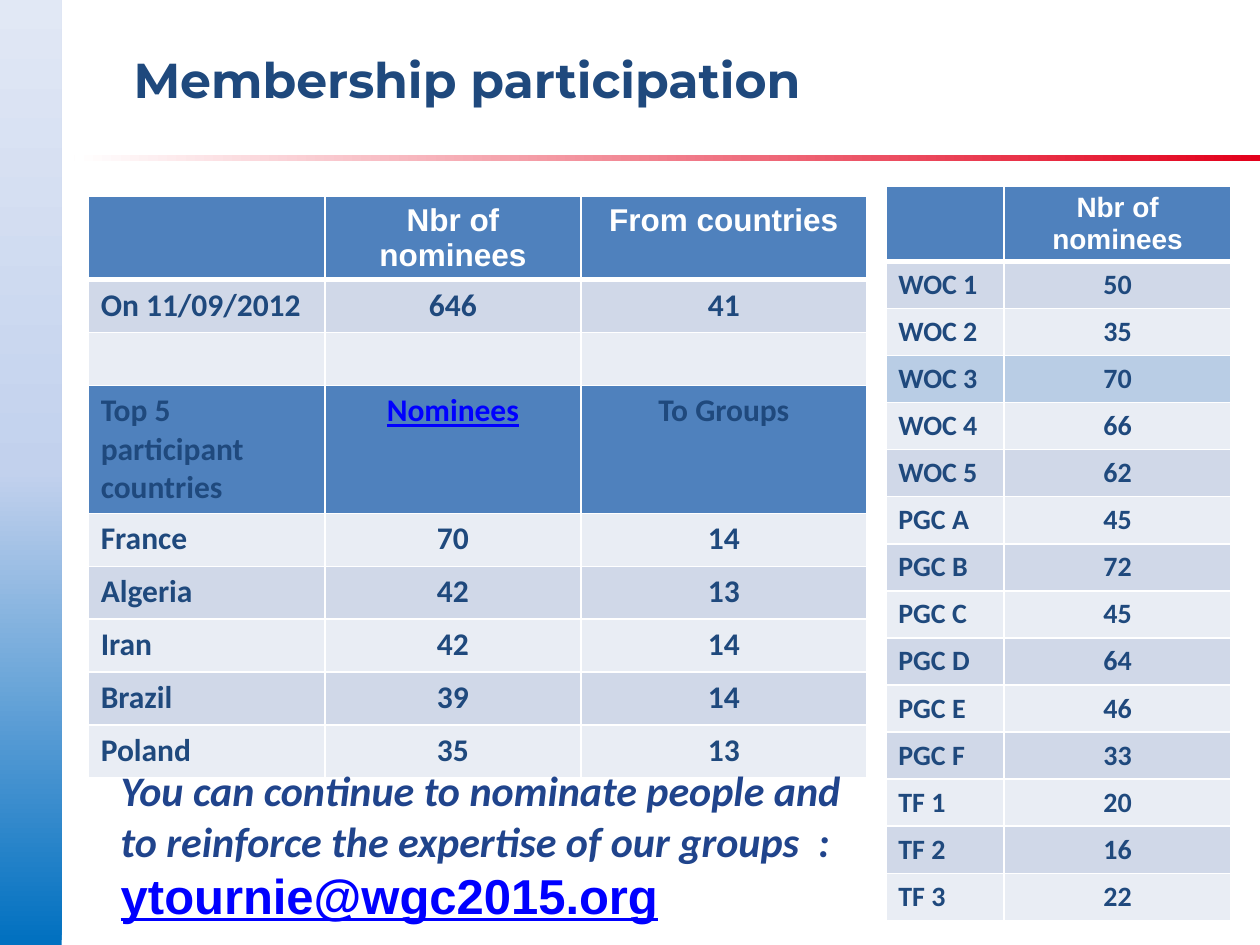
from lxml import etree
from pptx import Presentation
from pptx import util as u
from pptx.dml.color import RGBColor
from pptx.enum import shapes, text
from pptx.oxml import ns

NAVY, BLUE, WHITE, LINK = "1F497D", "4F81BD", "FFFFFF", "0000FF"
BANDS = ("E9EDF4", "D0D8E8")
HIGHLIGHT = "B9CDE5"
CENTER, LEFT = text.PP_ALIGN.CENTER, text.PP_ALIGN.LEFT

COUNTRY_ROWS = [
    ("", "Nbr of nominees", "From countries"),
    ("On 11/09/2012", "646", "41"),
    ("", "", ""),
    ("Top 5 participant countries", "Nominees", "To Groups"),
    ("France", "70", "14"),
    ("Algeria", "42", "13"),
    ("Iran", "42", "14"),
    ("Brazil", "39", "14"),
    ("Poland", "35", "13"),
]
GROUP_ROWS = [
    ("", "Nbr of nominees"),
    ("WOC 1", "50"), ("WOC 2", "35"), ("WOC 3", "70"), ("WOC 4", "66"), ("WOC 5", "62"),
    ("PGC A", "45"), ("PGC B", "72"), ("PGC C", "45"), ("PGC D", "64"), ("PGC E", "46"),
    ("PGC F", "33"), ("TF 1", "20"), ("TF 2", "16"), ("TF 3", "22"),
]


def color(value):
    return RGBColor.from_string(value)


def inches(*values):
    return [u.Inches(value) for value in values]


def write(para, words, size=18, font="Calibri", fill=NAVY, align=LEFT,
          italic=False, underline=False):
    para.alignment = align
    span = para.add_run()
    span.text = words
    span.font.size = u.Pt(size)
    span.font.name = font
    span.font.bold = True
    span.font.italic = italic
    span.font.underline = underline
    span.font.color.rgb = color(fill)


def add_gradient_bar(page, place, stops, angle):
    bar = page.shapes.add_shape(shapes.MSO_SHAPE.RECTANGLE, *inches(*place))
    bar.shadow.inherit = False
    bar.line.fill.background()
    bar.fill.gradient()
    gradient = bar.fill._xPr.find(ns.qn("a:gradFill"))
    for child in list(gradient):
        gradient.remove(child)
    stop_list = etree.SubElement(gradient, ns.qn("a:gsLst"))
    for position, value in stops:
        stop = etree.SubElement(stop_list, ns.qn("a:gs"), pos=str(position * 1000))
        etree.SubElement(stop, ns.qn("a:srgbClr"), val=value)
    etree.SubElement(gradient, ns.qn("a:lin"), ang=str(angle * 60000), scaled="0")


def add_borders(cell, top, bottom):
    properties = cell._tc.get_or_add_tcPr()
    for side, width in (("L", 1), ("R", 1), ("T", top), ("B", bottom)):
        line = etree.SubElement(properties, ns.qn("a:ln" + side), w=str(u.Pt(width)))
        solid = etree.SubElement(line, ns.qn("a:solidFill"))
        etree.SubElement(solid, ns.qn("a:srgbClr"), val=WHITE)


def add_grid(page, left, top, widths, heights, rows, size, row_fills):
    """Banded table; row_fills overrides the band of single rows."""
    frame = page.shapes.add_table(
        len(rows), len(widths), *inches(left, top, sum(widths), sum(heights)))
    table = frame.table
    for column, width in zip(table.columns, widths):
        column.width = u.Inches(width)
    for r, values in enumerate(rows):
        table.rows[r].height = u.Inches(heights[r])
        for c, words in enumerate(values):
            cell = table.cell(r, c)
            add_borders(cell, top=3 if r == 1 else 1, bottom=3 if r == 0 else 1)
            cell.fill.solid()
            cell.fill.fore_color.rgb = color(row_fills.get(r, BANDS[r % 2]))
            if not words:
                continue
            is_link = words == "Nominees"
            write(cell.text_frame.paragraphs[0], words, size=size,
                  font="Calibri" if r else "Arial",
                  fill=LINK if is_link else NAVY if r else WHITE,
                  align=CENTER if c else LEFT, underline=is_link)


def add_title(page, words):
    title = page.shapes.title
    title.left, title.top, title.width, title.height = inches(0.96, 0, 7.02, 1.25)
    title.text_frame.vertical_anchor = text.MSO_ANCHOR.MIDDLE
    write(title.text_frame.paragraphs[0], words, size=28, font="Montserrat")


def add_invitation(page):
    box = page.shapes.add_textbox(*inches(0.86, 6.02, 6.09, 1.4))
    frame = box.text_frame
    frame.word_wrap = True
    write(frame.paragraphs[0],
          "You can continue to nominate people and to reinforce "
          "the expertise of our groups  :",
          size=24, fill="20448C", italic=True)
    write(frame.add_paragraph(), "ytournie@wgc2015.org",
          size=28, font="Arial", fill=LINK, underline=True)


def main():
    deck = Presentation()
    deck.slide_width, deck.slide_height = inches(10, 7.5)
    page = deck.slides.add_slide(deck.slide_layouts[5])

    # Side band and rule under the title
    add_gradient_bar(page, (-0.04, 0, 0.53, 7.5),
                     [(0, "0070C0"), (50, "C2D1ED"), (100, "E1E8F5")], 270)
    add_gradient_bar(page, (0.59, 1.23, 9.41, 0.05),
                     [(0, "E3001B"), (100, WHITE)], 180)
    add_title(page, "Membership participation")

    # Nominees by country, then by group
    add_grid(page, 0.7, 1.56, (1.88, 2.03, 2.27), [0.55] + [0.42] * 8,
             COUNTRY_ROWS, 18, {0: BLUE, 3: BLUE})
    add_grid(page, 7.03, 1.48, (0.94, 1.8), [5.61 / 15] * 15,
             GROUP_ROWS, 16, {0: BLUE, 3: HIGHLIGHT})

    add_invitation(page)
    deck.save("out.pptx")


if __name__ == "__main__":
    main()
